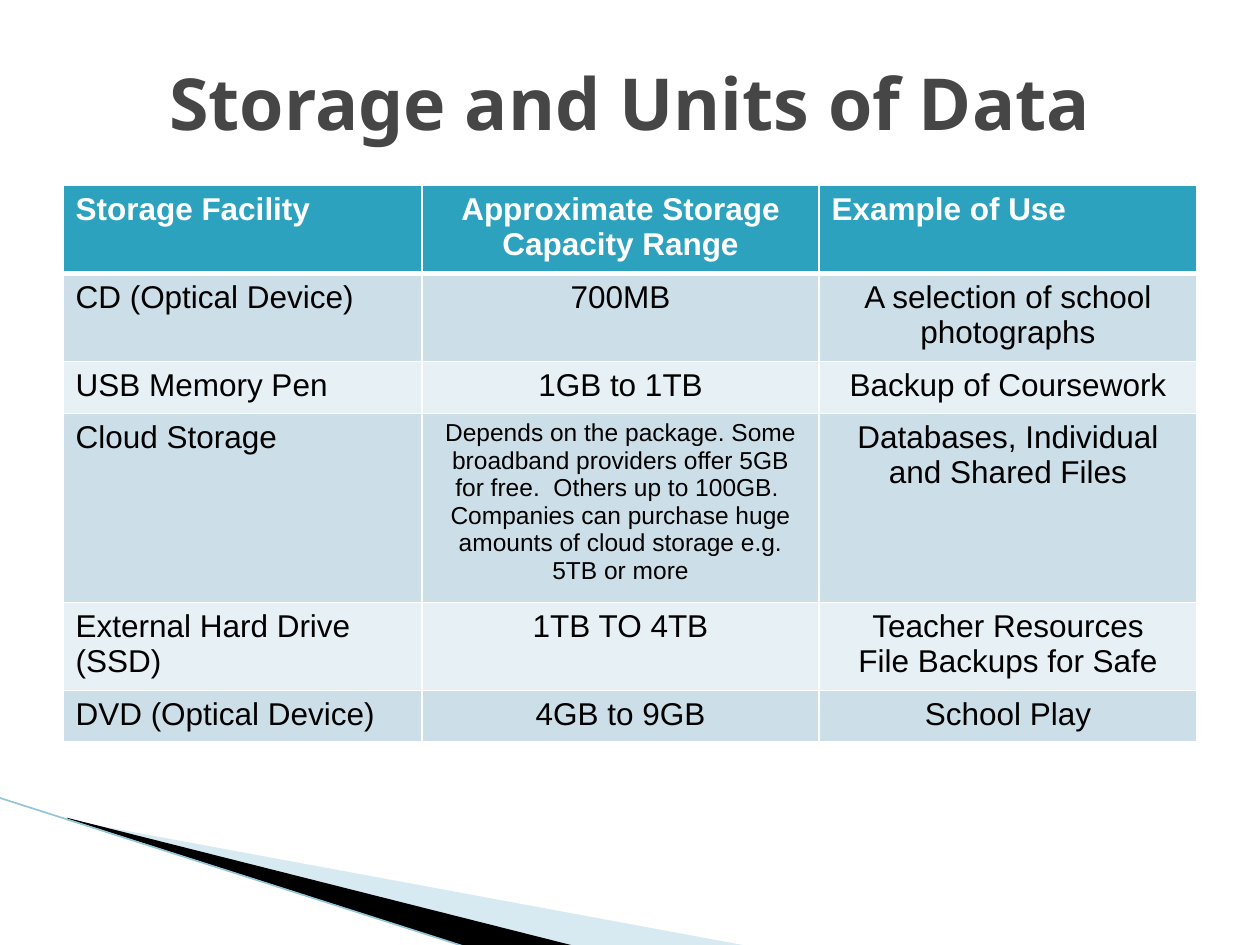
from lxml import etree
from pptx import Presentation
from pptx.dml.color import RGBColor
from pptx.enum.shapes import MSO_CONNECTOR as Connector
from pptx.enum.text import MSO_ANCHOR as Anchor, PP_ALIGN as Align
from pptx.oxml.ns import qn
from pptx.util import Inches, Pt

WHITE = RGBColor(0xFF, 0xFF, 0xFF)
BLACK = RGBColor(0x00, 0x00, 0x00)
GREY = RGBColor(0x46, 0x46, 0x46)
TEAL = RGBColor(0x2D, 0xA2, 0xBF)
BAND_DARK = RGBColor(0xCC, 0xDF, 0xE8)
BAND_LIGHT = RGBColor(0xE7, 0xF0, 0xF4)
WEDGE = RGBColor(0x9C, 0xCA, 0xDC)
EDGE = RGBColor(0x93, 0xC5, 0xD8)


def write(para, text, color, **formats):
    para.text = text
    for span in para.runs:
        span.font.color.rgb = color
        for name, value in formats.items():
            setattr(span.font, name, value)


def add_border(cell, side, width):
    line = etree.SubElement(cell._tc.get_or_add_tcPr(), qn(f"a:ln{side}"), w=str(Pt(width)))
    fill = etree.SubElement(line, qn("a:solidFill"))
    etree.SubElement(fill, qn("a:srgbClr"), val=str(WHITE))


deck = Presentation()
deck.slide_width, deck.slide_height = Inches(10), Inches(7.5)
page = deck.slides.add_slide(deck.slide_layouts[6])

wedges = [
    (WEDGE, 40, [(0.55, 6.51), (5.95, 7.51), (4.56, 7.51), (0.55, 6.5)]),
    (BLACK, 100, [(0.53, 6.49), (4.57, 7.51), (3.72, 7.52), (0.54, 6.5)]),
]
for color, opacity, points in wedges:
    corners = [(Inches(x), Inches(y)) for x, y in points]
    builder = page.shapes.build_freeform(*corners[0])
    builder.add_line_segments(corners[1:], close=True)
    wedge = builder.convert_to_shape()
    wedge.shadow.inherit = False
    wedge.line.fill.background()
    wedge.fill.solid()
    wedge.fill.fore_color.rgb = color
    if opacity < 100:
        tint = wedge._element.spPr.find(".//" + qn("a:srgbClr"))
        etree.SubElement(tint, qn("a:alpha"), val=str(opacity * 1000))

edge = page.shapes.add_connector(
    Connector.STRAIGHT, Inches(-0.01), Inches(6.33), Inches(3.71), Inches(7.52))
edge.line.color.rgb = EDGE
edge.line.width = Pt(0.95)
etree.SubElement(edge._element.spPr, qn("a:effectLst"))

rows = [
    ("Storage Facility", "Approximate Storage Capacity Range", "Example of Use"),
    ("CD (Optical Device)", "700MB", "A selection of school photographs"),
    ("USB Memory Pen", "1GB to 1TB", "Backup of Coursework"),
    ("Cloud Storage",
     "Depends on the package. Some broadband providers offer 5GB for free.  "
     "Others up to 100GB.  Companies can purchase huge amounts of cloud storage "
     "e.g. 5TB or more",
     "Databases, Individual and Shared Files"),
    ("External Hard Drive (SSD)", "1TB TO 4TB", "Teacher Resources\nFile Backups for Safe"),
    ("DVD (Optical Device)", "4GB to 9GB", "School Play"),
]
widths = [2.85, 3.15, 3]
heights = [0.7, 0.7, 0.41, 1.5, 0.7, 0.41]
table = page.shapes.add_table(
    len(rows), len(widths), Inches(0.5), Inches(1.47),
    Inches(sum(widths)), Inches(sum(heights))).table
for column, width in zip(table.columns, widths):
    column.width = Inches(width)
for row, height in zip(table.rows, heights):
    row.height = Inches(height)

for r, texts in enumerate(rows):
    header = r == 0
    for c, text in enumerate(texts):
        cell = table.cell(r, c)
        for side in "LRTB":
            heavy = (r, side) in [(0, "B"), (1, "T")]
            add_border(cell, side, 3 if heavy else 1)
        cell.fill.solid()
        cell.fill.fore_color.rgb = TEAL if header else BAND_DARK if r % 2 else BAND_LIGHT
        para = cell.text_frame.paragraphs[0]
        centred = c == 1 or (c == 2 and not header)
        para.alignment = Align.CENTER if centred else Align.LEFT
        size = Pt(14 if (r, c) == (3, 1) else 18)
        write(para, text, WHITE if header else BLACK, size=size, name="Arial", bold=header)

title = page.shapes.add_textbox(Inches(0.5), Inches(0.3), Inches(9), Inches(1.01))
title.text_frame.word_wrap = True
title.text_frame.vertical_anchor = Anchor.MIDDLE
para = title.text_frame.paragraphs[0]
para.alignment = Align.CENTER
write(para, "Storage and Units of Data", GREY, size=Pt(41), name="Noto Sans", bold=True)

deck.save("out.pptx")
